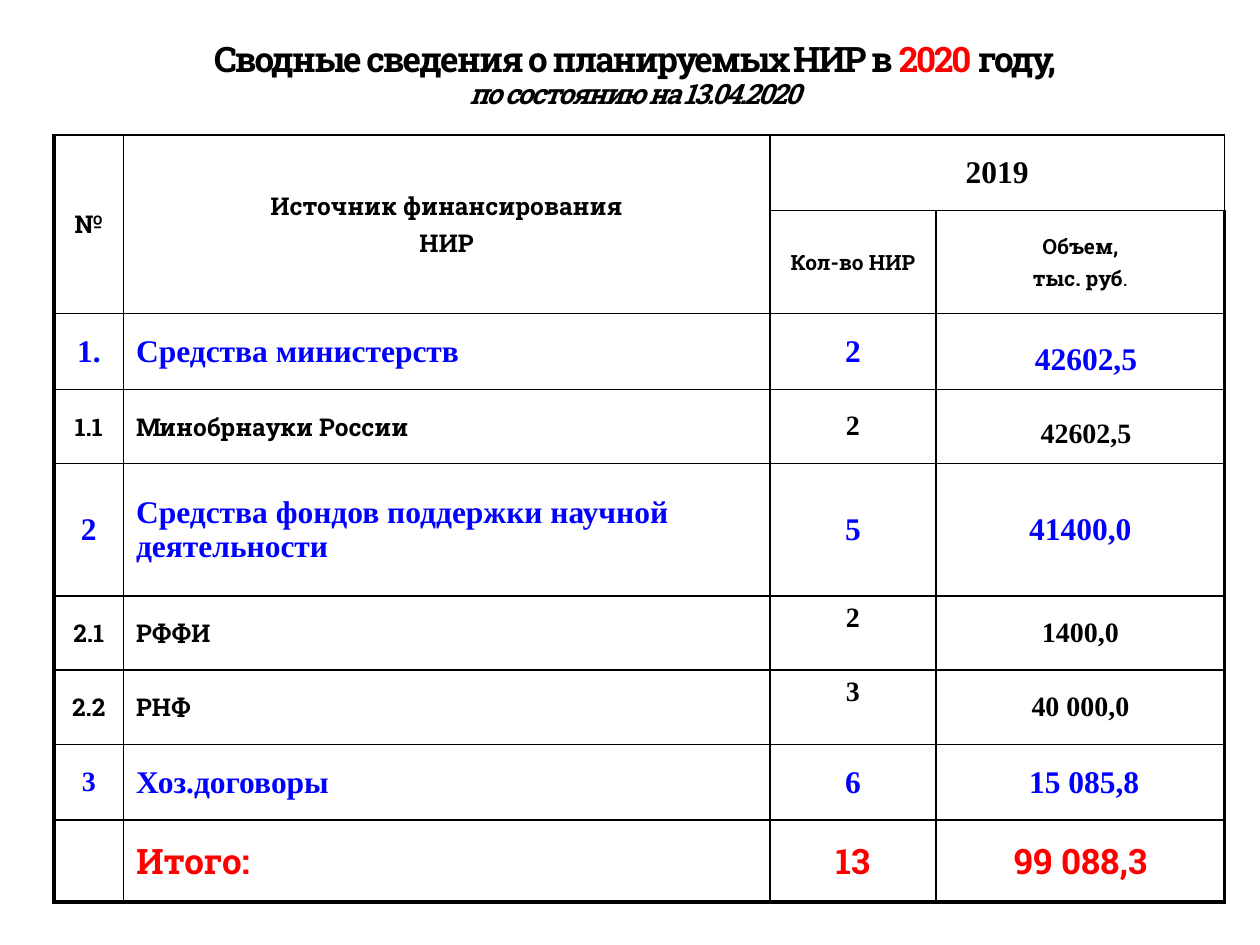
from dataclasses import dataclass

import pptx
import pptx.dml.color
import pptx.enum.text
import pptx.util
from lxml import etree
from pptx.oxml.ns import qn

Align = pptx.enum.text.PP_ALIGN
Anchor = pptx.enum.text.MSO_ANCHOR
Inches = pptx.util.Inches
Pt = pptx.util.Pt


@dataclass(frozen=True)
class Theme:
    slab: str = "Roboto Slab"
    serif: str = "Times New Roman"
    black: str = "000000"
    blue: str = "0000FF"
    red: str = "FF0000"
    tiny: int = 12
    small: int = 14
    medium: int = 16
    large: int = 18
    title: int = 20
    thin: float = 1
    thick: float = 2.25
    tracking: float = -1.2


THEME = Theme()


@dataclass(frozen=True)
class Style:
    size: int
    font: str = THEME.slab
    color: str = THEME.black


@dataclass(frozen=True)
class Entry:
    text: str
    style: Style
    align: Align = Align.CENTER
    anchor: Anchor = Anchor.MIDDLE
    indent: float = 0
    line_spacing: float = 1


LABEL = Style(THEME.small)
SUBHEAD = Style(THEME.tiny)
YEAR = Style(THEME.large, THEME.serif)
GROUP = Style(THEME.large, THEME.serif, THEME.blue)
GROUP_SMALL = Style(THEME.medium, THEME.serif, THEME.blue)
VALUE = Style(THEME.medium, THEME.serif)
TOTAL = Style(THEME.title, THEME.slab, THEME.red)

COLUMNS = (0.55, 5.13, 1.32, 2.29)
ROWS = (0.6, 0.82, 0.6, 0.59, 1.05, 0.59, 0.59, 0.6, 0.65)
LEFT, TOP = 0.43, 1.07
CELL_MARGIN = 0.1
SPACE_BEFORE = 0.2


def name(text: str, style: Style) -> Entry:
    return Entry(text, style, align=Align.LEFT)


def raised(text: str) -> Entry:
    return Entry(text, VALUE, anchor=Anchor.TOP)


def lowered(text: str, style: Style) -> Entry:
    return Entry(text, style, indent=0.09, line_spacing=1.5)


CELLS = (
    (Entry("№", LABEL), Entry("Источник финансирования\nНИР", LABEL), Entry("2019", YEAR), None),
    (None, None, Entry("Кол-во НИР", SUBHEAD), Entry("Объем,\nтыс. руб", SUBHEAD)),
    (Entry("1.", GROUP), name("Средства министерств", GROUP), Entry("2", GROUP),
     lowered("42602,5", GROUP)),
    (Entry("1.1", LABEL), name("Минобрнауки России", LABEL), Entry("2", VALUE),
     lowered("42602,5", VALUE)),
    (Entry("2", GROUP), name("Средства фондов поддержки научной деятельности", GROUP),
     Entry("5", GROUP), Entry("41400,0", GROUP)),
    (Entry("2.1", LABEL), name("РФФИ", LABEL), raised("2"), Entry("1400,0", VALUE)),
    (Entry("2.2", LABEL), name("РНФ", LABEL), raised("3"), Entry("40 000,0", VALUE)),
    (Entry("3", GROUP_SMALL), name("Хоз.договоры", GROUP), Entry("6", GROUP),
     Entry("15 085,8", GROUP, indent=0.06)),
    (None, name("Итого:", TOTAL), Entry("13", TOTAL), Entry("99 088,3", TOTAL)),
)


def set_font(font: pptx.text.text.Font, style: Style) -> None:
    font.size = Pt(style.size)
    font.name = style.font
    font.bold = True
    font.color.rgb = pptx.dml.color.RGBColor.from_string(style.color)


def draw_title(slide: pptx.slide.Slide) -> None:
    box = slide.shapes.add_textbox(Inches(0.59), Inches(0.21), Inches(8.9), Inches(0.79))
    frame = box.text_frame
    frame.word_wrap = True
    frame.vertical_anchor = Anchor.MIDDLE
    paragraph = frame.paragraphs[0]
    paragraph.alignment = Align.CENTER
    paragraph.line_spacing = 0.9
    heading = Style(THEME.title)

    def add_run(text: str, style: Style, italic: bool = False) -> None:
        run = paragraph.add_run()
        run.text = text
        set_font(run.font, style)
        run.font.italic = italic
        run.font._element.set("spc", str(round(THEME.tracking * 100)))

    add_run("Сводные сведения о планируемых НИР в ", heading)
    add_run("2020 ", TOTAL)
    add_run("году,", heading)
    paragraph.add_line_break()
    add_run("по состоянию на 13.04.2020", Style(THEME.medium), italic=True)


def set_borders(cell: pptx.table._Cell, row: int, column: int) -> None:
    """Thin lines inside, thick ones on the left, the bottom and the right below the year."""
    thick_sides = {
        "a:lnL": column == 0,
        "a:lnR": column == len(COLUMNS) - 1 and row > 0,
        "a:lnT": False,
        "a:lnB": row == len(ROWS) - 1,
    }
    properties = cell._tc.get_or_add_tcPr()
    for tag, is_thick in thick_sides.items():
        width = Pt(THEME.thick if is_thick else THEME.thin)
        line = etree.SubElement(properties, qn(tag), w=str(width))
        fill = etree.SubElement(line, qn("a:solidFill"))
        etree.SubElement(fill, qn("a:srgbClr"), val=THEME.black)


def fill_cell(cell: pptx.table._Cell, entry: Entry) -> None:
    cell.text = entry.text
    cell.vertical_anchor = entry.anchor
    cell.margin_left = Inches(CELL_MARGIN + entry.indent)
    for index, paragraph in enumerate(cell.text_frame.paragraphs):
        paragraph.alignment = entry.align
        paragraph.line_spacing = entry.line_spacing
        if index:
            paragraph.space_before = Pt(entry.style.size * SPACE_BEFORE)
        set_font(paragraph.font, entry.style)


def draw_table(slide: pptx.slide.Slide) -> None:
    frame = slide.shapes.add_table(
        len(ROWS), len(COLUMNS), Inches(LEFT), Inches(TOP),
        Inches(sum(COLUMNS)), Inches(sum(ROWS)))
    table = frame.table
    table.first_row = table.horz_banding = False
    for column, width in zip(table.columns, COLUMNS):
        column.width = Inches(width)
    for row, height in zip(table.rows, ROWS):
        row.height = Inches(height)
    for row, entries in enumerate(CELLS):
        for column, entry in enumerate(entries):
            cell = table.cell(row, column)
            set_borders(cell, row, column)
            cell.fill.background()
            if entry:
                fill_cell(cell, entry)
    for column in (0, 1):
        table.cell(0, column).merge(table.cell(1, column))
    table.cell(0, 2).merge(table.cell(0, 3))
    full_stop = table.cell(1, 3).text_frame.paragraphs[-1].add_run()
    full_stop.text = "."
    full_stop.font.bold = False


def main() -> None:
    presentation = pptx.Presentation()
    presentation.slide_width, presentation.slide_height = Inches(10), Inches(7.5)
    slide = presentation.slides.add_slide(presentation.slide_layouts[6])
    draw_title(slide)
    draw_table(slide)
    presentation.save("out.pptx")


if __name__ == "__main__":
    main()
